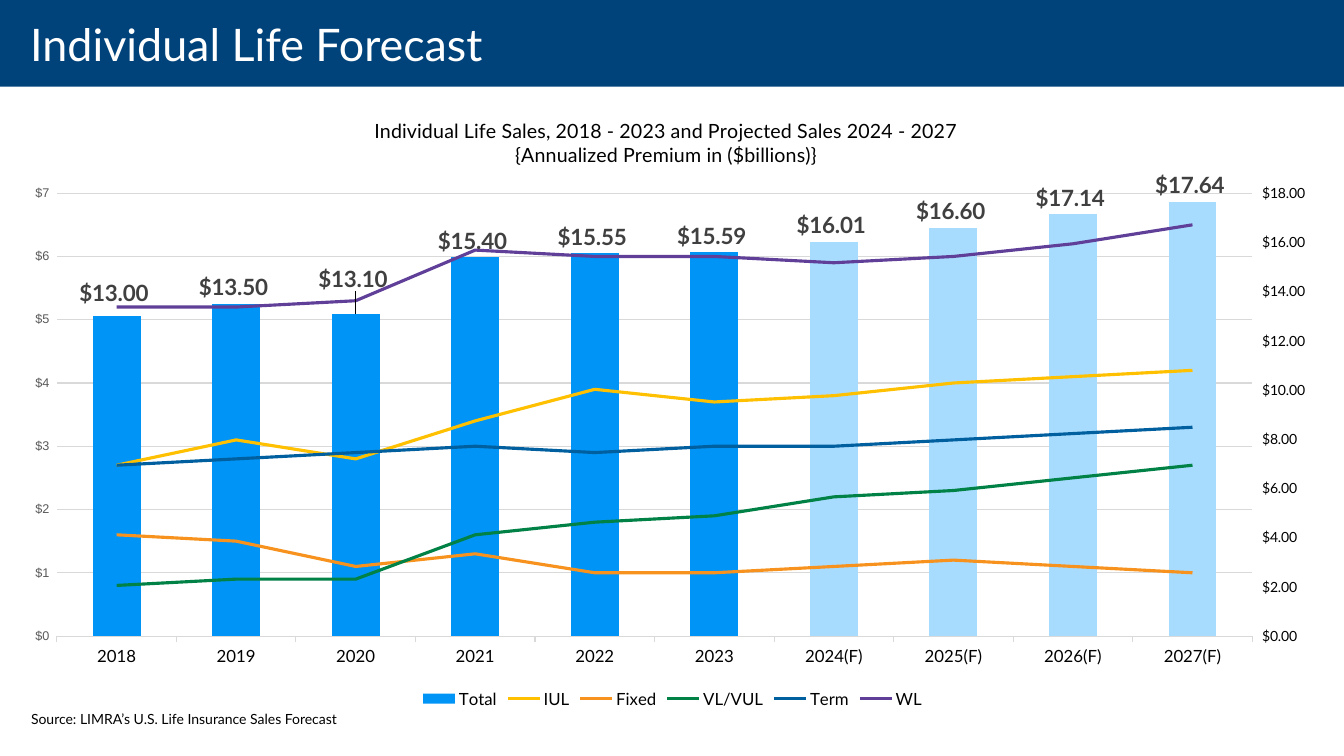
from copy import deepcopy
from dataclasses import dataclass

from pptx import Presentation
from pptx.chart.axis import CategoryAxis, ValueAxis
from pptx.chart.data import CategoryChartData
from pptx.dml.color import RGBColor
from pptx.enum.chart import (XL_AXIS_CROSSES, XL_CHART_TYPE, XL_LABEL_POSITION,
                             XL_LEGEND_POSITION, XL_MARKER_STYLE,
                             XL_TICK_LABEL_POSITION, XL_TICK_MARK)
from pptx.enum.shapes import MSO_SHAPE
from pptx.enum.text import MSO_ANCHOR
from pptx.oxml import parse_xml
from pptx.oxml.ns import nsdecls, qn
from pptx.util import Inches, Pt


@dataclass(frozen=True)
class Theme:
    font: str = "Lato"
    plain: str = "Arial"
    band: str = "00437B"
    white: str = "FFFFFF"
    ink: str = "000000"
    label: str = "404040"
    muted: str = "595959"
    grid: str = "D9D9D9"
    bar: str = "0094F6"
    future: str = "A7DCFF"
    head: int = 32
    value: int = 16
    title: int = 14
    text: int = 12
    small: int = 10
    tiny: int = 9


THEME = Theme()
CENTS = '"$"#,##0.00_);[Red]\\("$"#,##0.00\\)'
DOLLARS = '"$"#,##0_);[Red]\\("$"#,##0\\)'
YEARS = [str(year) for year in range(2018, 2024)] + [f"{year}(F)" for year in range(2024, 2028)]
TOTAL = [13, 13.5, 13.1, 15.4, 15.55, 15.59, 16.01, 16.6, 17.14, 17.64]
LINES = {
    "IUL": ("FFC000", [2.7, 3.1, 2.8, 3.4, 3.9, 3.7, 3.8, 4, 4.1, 4.2]),
    "Fixed": ("F7921E", [1.6, 1.5, 1.1, 1.3, 1, 1, 1.1, 1.2, 1.1, 1]),
    "VL/VUL": ("008145", [0.8, 0.9, 0.9, 1.6, 1.8, 1.9, 2.2, 2.3, 2.5, 2.7]),
    "Term": ("005F9E", [2.7, 2.8, 2.9, 3, 2.9, 3, 3, 3.1, 3.2, 3.3]),
    "WL": ("603F99", [5.2, 5.2, 5.3, 6.1, 6, 6, 5.9, 6, 6.2, 6.5]),
}
RAISED = {0: -0.01, 2: -0.03}  # labels lifted clear of the WL line
NO_LEADERS = (
    f'<c:extLst {nsdecls("c")}><c:ext uri="{{CE6537A1-D6FC-4f65-9D91-7224C49458BB}}" '
    'xmlns:c15="http://schemas.microsoft.com/office/drawing/2012/chart">'
    '<c15:showLeaderLines val="0"/></c:ext></c:extLst>')


def style(font, size, color, name=THEME.font, bold=False):
    font.name, font.size, font.bold = name, Pt(size), bold
    font.color.rgb = RGBColor.from_string(color)


def paint(fill, color):
    fill.solid()
    fill.fore_color.rgb = RGBColor.from_string(color)


def draw(line, color, width):
    line.color.rgb = RGBColor.from_string(color)
    line.width = Pt(width)


def place(parent, index, **parts):
    """Give a chart part a manual layout, in fractions of the chart."""
    for old in parent.findall(qn("c:layout")):
        parent.remove(old)
    body = "".join(f'<c:{key} val="{val}"/>' for key, val in parts.items())
    parent.insert(index, parse_xml(
        f'<c:layout {nsdecls("c")}><c:manualLayout>{body}</c:manualLayout></c:layout>'))


def add_text(slide, box, text, size, color, anchor, inset=0.1):
    frame = slide.shapes.add_textbox(*map(Inches, box)).text_frame
    frame.word_wrap = True
    frame.vertical_anchor = anchor
    frame.margin_left = Inches(inset)
    frame.text = text
    style(frame.paragraphs[0].runs[0].font, size, color)


def add_header(slide, box):
    band = slide.shapes.add_shape(MSO_SHAPE.RECTANGLE, *map(Inches, box))
    band.shadow.inherit = False
    paint(band.fill, THEME.band)
    band.line.fill.background()
    add_text(slide, box, "Individual Life Forecast", THEME.head, THEME.white,
             MSO_ANCHOR.MIDDLE, 0.3)


def split_lines(chart):
    """Move all but the first series to a line plot with its own axes, listed first."""
    area = chart.element.find(".//" + qn("c:plotArea"))
    bars = area.find(qn("c:barChart"))
    lines = parse_xml(
        f'<c:lineChart {nsdecls("c")}><c:grouping val="standard"/><c:varyColors val="0"/>'
        '<c:marker val="1"/><c:axId val="5001"/><c:axId val="5002"/></c:lineChart>')
    for ser in bars.findall(qn("c:ser"))[1:]:
        for tag in ser.findall(qn("c:invertIfNegative")):
            ser.remove(tag)
        lines.find(qn("c:marker")).addprevious(ser)
    bars.addnext(lines)

    cat, val = area.find(qn("c:catAx")), area.find(qn("c:valAx"))
    cat2, val2 = deepcopy(cat), deepcopy(val)
    for axis, own, other in ((cat2, "5001", "5002"), (val2, "5002", "5001")):
        axis.find(qn("c:axId")).set("val", own)
        axis.find(qn("c:crossAx")).set("val", other)
        cat.addprevious(axis)
    val.find(qn("c:axPos")).set("val", "r")
    return CategoryAxis(cat2), ValueAxis(val2), CategoryAxis(cat), ValueAxis(val)


def style_scale(axis, top, step, form, size, color, name):
    axis.minimum_scale, axis.maximum_scale, axis.major_unit = 0, top, step
    axis.tick_labels.number_format = form
    axis.tick_labels.number_format_is_linked = False
    style(axis.tick_labels.font, size, color, name)
    axis.format.line.fill.background()


def style_axes(chart):
    years, left, spare, right = split_lines(chart)
    draw(years.format.line, THEME.grid, 0.75)
    years.major_tick_mark = XL_TICK_MARK.OUTSIDE
    style(years.tick_labels.font, THEME.text, THEME.ink)

    left.major_tick_mark = XL_TICK_MARK.NONE
    style_scale(left, 7, 1, DOLLARS, THEME.tiny, THEME.muted, THEME.plain)
    draw(left.major_gridlines.format.line, THEME.grid, 0.75)

    spare.visible = False
    spare.crosses = XL_AXIS_CROSSES.MAXIMUM
    right.has_major_gridlines = False
    right.major_tick_mark = XL_TICK_MARK.OUTSIDE
    right.tick_label_position = XL_TICK_LABEL_POSITION.HIGH
    style_scale(right, 18, 2, CENTS, THEME.small, THEME.ink, THEME.font)


def style_bars(plot):
    plot.gap_width = 150
    plot.vary_by_categories = False
    total = plot.series[0]
    paint(total.format.fill, THEME.bar)
    for i, year in enumerate(YEARS):
        if year.endswith("(F)"):
            paint(total.points[i].format.fill, THEME.future)

    labels = total.data_labels
    labels.show_value = True
    labels.position = XL_LABEL_POSITION.OUTSIDE_END
    labels.number_format, labels.number_format_is_linked = CENTS, False
    style(labels.font, THEME.value, THEME.label, bold=True)
    for i in RAISED:
        label = total.points[i].data_label
        style(label.font, THEME.value, THEME.label, bold=True)
        label.position = XL_LABEL_POSITION.OUTSIDE_END
    for tag in labels._element.findall(qn("c:dLbl")):
        index = int(tag.find(qn("c:idx")).get("val"))
        place(tag, 1, x=0, y=RAISED[index])
    labels._element.append(parse_xml(NO_LEADERS))


def style_lines(plot):
    for ser, (color, _) in zip(plot.series, LINES.values()):
        draw(ser.format.line, color, 2.25)
        ser.marker.style = XL_MARKER_STYLE.NONE
        ser.smooth = False


def add_sales(slide, box):
    data = CategoryChartData()
    data.categories = YEARS
    data.add_series("Total", TOTAL, CENTS)
    for name, (_, values) in LINES.items():
        data.add_series(name, values, DOLLARS)
    chart = slide.shapes.add_chart(
        XL_CHART_TYPE.COLUMN_CLUSTERED, *map(Inches, box), data).chart
    style(chart.font, THEME.small, THEME.ink, THEME.plain)

    style_axes(chart)
    style_bars(chart.plots[0])
    style_lines(chart.plots[1])
    place(chart.element.find(".//" + qn("c:plotArea")), 0, layoutTarget="inner",
          xMode="edge", yMode="edge", x=0.036, y=0.158, w=0.901, h=0.718)

    # Title and legend
    frame = chart.chart_title.text_frame
    frame.text = ("Individual Life Sales, 2018 - 2023 and Projected Sales 2024 - 2027\n"
                  "{Annualized Premium in ($billions)}")
    for para in frame.paragraphs:
        style(para.runs[0].font, THEME.title, THEME.ink)
    place(chart.chart_title._element, 1, xMode="edge", yMode="edge", x=0.273, y=0.029)
    chart.has_legend = True
    chart.legend.position = XL_LEGEND_POSITION.BOTTOM
    chart.legend.include_in_layout = False
    style(chart.legend.font, THEME.text, THEME.ink)


def main():
    deck = Presentation()
    deck.slide_width, deck.slide_height = Inches(13.33), Inches(7.5)
    slide = deck.slides.add_slide(deck.slide_layouts[6])
    add_header(slide, (0, 0, 13.33, 0.86))
    add_sales(slide, (0.09, 0.95, 13.16, 6.12))
    add_text(slide, (0.21, 7, 9.88, 0.4), "Source: LIMRA’s U.S. Life Insurance Sales Forecast",
             THEME.small, THEME.ink, MSO_ANCHOR.TOP)
    deck.save("out.pptx")


if __name__ == "__main__":
    main()
